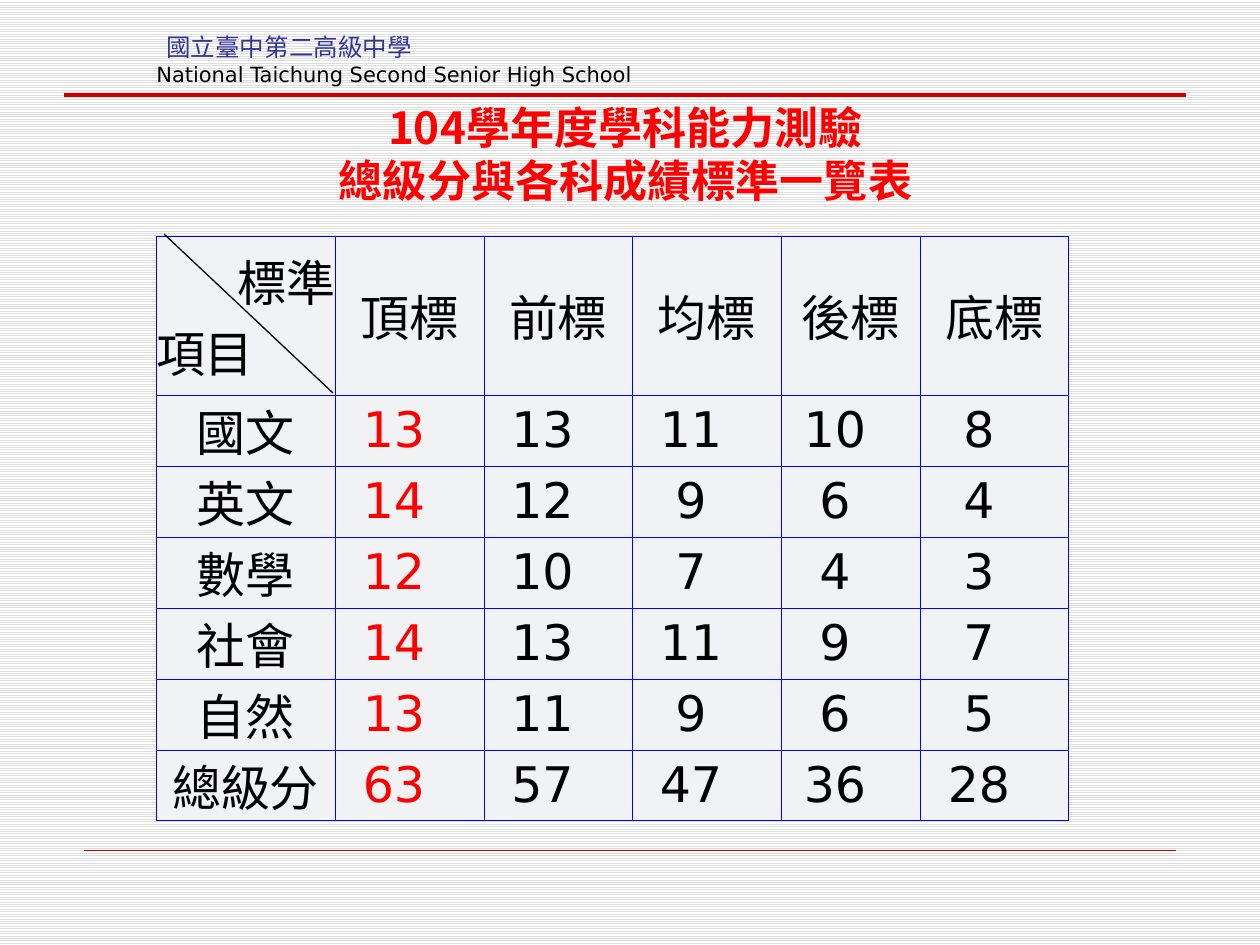
from dataclasses import dataclass

from lxml import etree
from pptx import Presentation
from pptx import util as u
from pptx.dml.color import RGBColor
from pptx.enum import dml, shapes, text
from pptx.oxml import ns

TITLE = "104學年度學科能力測驗\v總級分與各科成績標準一覽表"
SCHOOL = "國立臺中第二高級中學"
ENGLISH = "National Taichung Second Senior High School"
CORNER = ("標準", "項目")
LEVELS = ("頂標", "前標", "均標", "後標", "底標")
SCORES = {
    "國文": (13, 13, 11, 10, 8),
    "英文": (14, 12, 9, 6, 4),
    "數學": (12, 10, 7, 4, 3),
    "社會": (14, 13, 11, 9, 7),
    "自然": (13, 11, 9, 6, 5),
    "總級分": (63, 57, 47, 36, 28),
}
COLS = (179, 149, 148, 149, 139, 149)
HEAD, ROW = 159, 71
SHIFT = 31  # right margin that sets the scores left of centre


@dataclass(frozen=True)
class Theme:
    red: str = "FF0000"
    rule: str = "CC0000"
    navy: str = "333399"
    blue: str = "0000FF"
    black: str = "000000"
    cell: str = "F0F2F4"
    stripe: str = "DDDDDD"
    white: str = "FFFFFF"
    sans: str = "DejaVu Sans"
    arial: str = "Arial"
    bold: str = "Noto Sans CJK SC"
    cjk: str = "Noto Sans CJK TC"
    title: float = 25.2
    table: int = 28
    school: int = 14
    english: int = 12


T = Theme()
ALIGN = text.PP_ALIGN


def px(n):
    return u.Emu(n * 914400 // 126)


def rgb(code):
    return RGBColor.from_string(code)


def style(par, size, color, face, east=T.cjk, bold=False, align=ALIGN.LEFT):
    par.alignment = align
    for run in par.runs:
        font = run.font
        font.size, font.name, font.bold = u.Pt(size), face, bold
        font.color.rgb = rgb(color)
        ea = etree.SubElement(run._r.get_or_add_rPr(), ns.qn("a:ea"))
        ea.set("typeface", east)


def label(slide, words, box, wrap=True):
    frame = slide.shapes.add_textbox(*map(px, box)).text_frame
    frame.word_wrap = wrap
    frame.text = words
    return frame


def rule(slide, ends, color, width):
    line = slide.shapes.add_connector(
        shapes.MSO_CONNECTOR.STRAIGHT, *map(px, ends))
    line.line.color.rgb = rgb(color)
    line.line.width = u.Pt(width)
    etree.SubElement(line._element.spPr, ns.qn("a:effectLst"))


def border(cell):
    """Draw a thin blue line on all four sides."""
    props = cell._tc.get_or_add_tcPr()
    for i, side in enumerate(("lnL", "lnR", "lnT", "lnB")):
        edge = etree.Element(ns.qn(f"a:{side}"), w=str(u.Pt(0.5)))
        fill = etree.SubElement(edge, ns.qn("a:solidFill"))
        etree.SubElement(fill, ns.qn("a:srgbClr"), val=T.blue)
        props.insert(i, edge)


def put(cell, words, color=T.black, aligns=(ALIGN.CENTER,), right=0):
    cell.margin_left = cell.margin_top = cell.margin_bottom = 0
    cell.margin_right = px(right)
    cell.vertical_anchor = text.MSO_ANCHOR.MIDDLE
    cell.fill.solid()
    cell.fill.fore_color.rgb = rgb(T.cell)
    border(cell)
    cell.text_frame.text = words
    for par, align in zip(cell.text_frame.paragraphs, aligns):
        style(par, T.table, color, T.sans, align=align)


def grid(slide):
    rows = (HEAD,) + (ROW,) * len(SCORES)
    table = slide.shapes.add_table(
        len(rows), len(COLS), px(156), px(236),
        px(sum(COLS)), px(sum(rows))).table
    table.first_row = table.horz_banding = False
    for col, width in zip(table.columns, COLS):
        col.width = px(width)
    for row, height in zip(table.rows, rows):
        row.height = px(height)

    put(table.cell(0, 0), "\n".join(CORNER), aligns=(ALIGN.RIGHT, ALIGN.LEFT))
    for c, level in enumerate(LEVELS, 1):
        put(table.cell(0, c), level)
    for r, (subject, marks) in enumerate(SCORES.items(), 1):
        put(table.cell(r, 0), subject)
        for c, mark in enumerate(marks, 1):
            color = T.red if c == 1 else T.black
            put(table.cell(r, c), str(mark), color, right=SHIFT)


def main():
    deck = Presentation()
    deck.slide_width, deck.slide_height = px(1260), px(945)
    slide = deck.slides.add_slide(deck.slide_layouts[6])
    back = slide.background.fill
    back.patterned()
    back.pattern = dml.MSO_PATTERN.LIGHT_HORIZONTAL
    back.fore_color.rgb = rgb(T.stripe)
    back.back_color.rgb = rgb(T.white)

    rule(slide, (84, 850, 1176, 850), T.rule, 0.25)
    rule(slide, (64, 95, 1186, 95), T.rule, 2.5)
    school = label(slide, SCHOOL, (154, 26, 348, 42))
    style(school.paragraphs[0], T.school, T.navy, T.arial,
          align=ALIGN.JUSTIFY)
    english = label(slide, ENGLISH, (144, 55, 507, 38), wrap=False)
    style(english.paragraphs[0], T.english, T.black, T.sans)

    title = label(slide, TITLE, (74, 125, 1103, 88))
    title.vertical_anchor = text.MSO_ANCHOR.BOTTOM
    style(title.paragraphs[0], T.title, T.red, T.bold, T.bold, True,
          ALIGN.CENTER)

    grid(slide)
    rule(slide, (164, 234, 333, 393), T.black, 0.75)
    deck.save("out.pptx")


if __name__ == "__main__":
    main()
